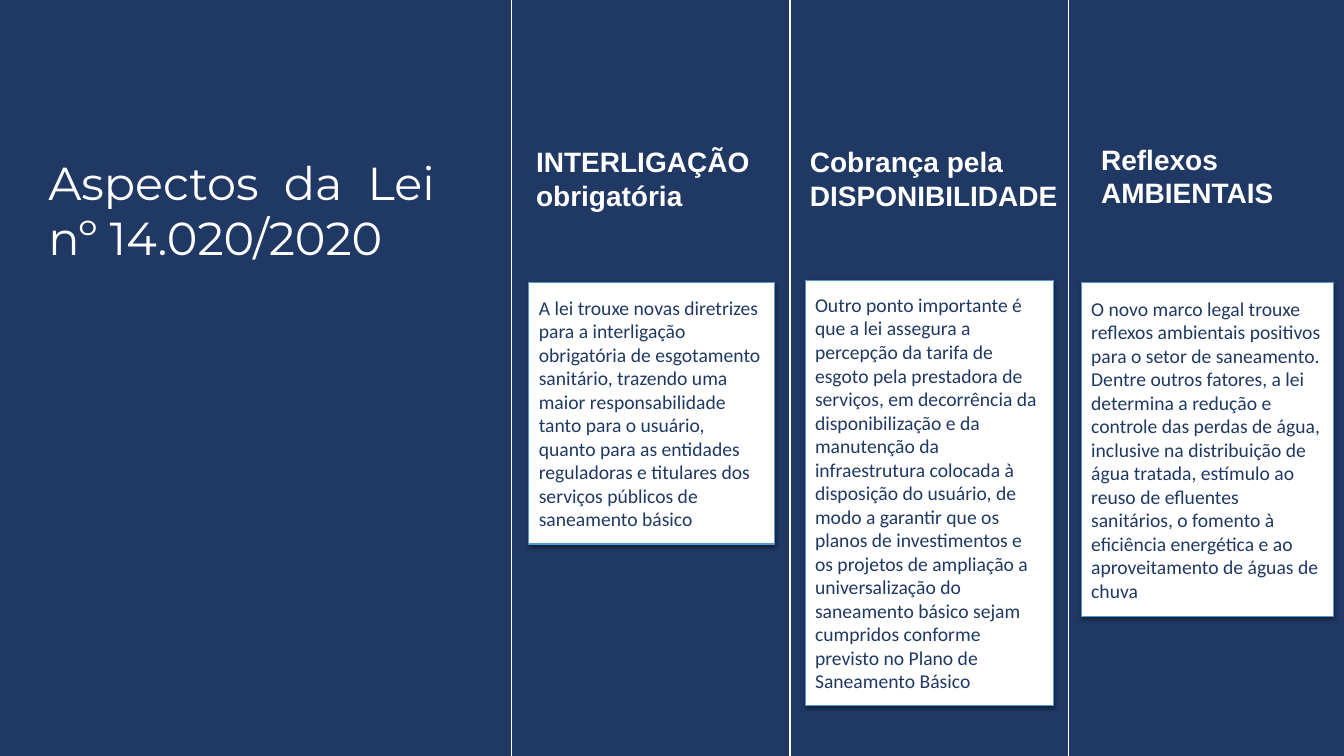
from dataclasses import dataclass
from itertools import count

from lxml import etree
from pptx import Presentation
from pptx.dml.color import RGBColor
from pptx.enum.shapes import MSO_SHAPE
from pptx.enum.text import MSO_ANCHOR, MSO_AUTO_SIZE, PP_ALIGN
from pptx.oxml.ns import qn
from pptx.util import Cm, Pt

RECTANGLE = MSO_SHAPE.RECTANGLE
TOP, MIDDLE = MSO_ANCHOR.TOP, MSO_ANCHOR.MIDDLE
LEFT, JUSTIFY = PP_ALIGN.LEFT, PP_ALIGN.JUSTIFY
NO_AUTOFIT = MSO_AUTO_SIZE.NONE
TITLE_ONLY = 5


@dataclass(frozen=True)
class Theme:
    navy: RGBColor = RGBColor(0x20, 0x38, 0x64)
    white: RGBColor = RGBColor(0xFF, 0xFF, 0xFF)
    card_border: RGBColor = RGBColor(0x56, 0x98, 0xD3)
    title_font: str = "Montserrat"
    heading_font: str = "Arial"
    body_font: str = "Calibri"
    title_size: int = 33
    heading_size: int = 20
    body_size: int = 14
    border: float = 0.75


@dataclass(frozen=True)
class Aspect:
    """Boxes are left, top, width, height in cm, measured from the column corner."""
    heading: str
    heading_box: tuple
    explanation: str
    card_box: tuple


THEME = Theme()
SLIDE_SIZE = (33.87, 19.05)
TITLE_BOX = (0.97, 3.63, 10.24, 4.06)
FIRST_COLUMN = (12.9, -0.51, 7.01, 20.52)
ASPECTS = [
    Aspect(
        "INTERLIGAÇÃO obrigatória", (0.36, 4.02, 6.2, 1.96),
        "A lei trouxe novas diretrizes para a interligação obrigatória de "
        "esgotamento sanitário, trazendo uma maior responsabilidade tanto para "
        "o usuário, quanto para as entidades reguladoras e titulares dos "
        "serviços públicos de saneamento básico",
        (0.43, 7.62, 6.2, 6.6)),
    Aspect(
        "Cobrança pela DISPONIBILIDADE", (0.25, 4.02, 6.8, 1.96),
        "Outro ponto importante é que a lei assegura a percepção da tarifa de "
        "esgoto pela prestadora de serviços, em decorrência da disponibilização "
        "e da manutenção da infraestrutura colocada à disposição do usuário, de "
        "modo a garantir que os planos de investimentos e os projetos de "
        "ampliação a universalização do saneamento básico sejam cumpridos "
        "conforme previsto no Plano de Saneamento Básico",
        (0.38, 7.57, 6.27, 10.72)),
    Aspect(
        "Reflexos AMBIENTAIS", (0.58, 3.96, 6.2, 1.96),
        "O novo marco legal trouxe reflexos ambientais positivos para o setor "
        "de saneamento. Dentre outros fatores, a lei determina a redução e "
        "controle das perdas de água, inclusive na distribuição de água "
        "tratada, estímulo ao reuso de efluentes sanitários, o fomento à "
        "eficiência energética e ao aproveitamento de águas de chuva",
        (0.33, 7.62, 6.35, 8.43)),
]


def lengths(box):
    return [Cm(value) for value in box]


def inside(column, box):
    """Turn a box measured from the column corner into a slide box."""
    return (column[0] + box[0], column[1] + box[1], *box[2:])


def write_text(shape, text, *, font, size, color, bold=False, align=LEFT,
               anchor=TOP, inset_y=0.13):
    frame = shape.text_frame
    frame.word_wrap = True
    frame.auto_size = NO_AUTOFIT
    frame.vertical_anchor = anchor
    frame.margin_left = frame.margin_right = Cm(0.25)
    frame.margin_top = frame.margin_bottom = Cm(inset_y)
    paragraph = frame.paragraphs[0]
    paragraph.alignment = align
    run = paragraph.add_run()
    run.text = text
    run.font.name = font
    run.font.size = Pt(size)
    run.font.bold = bold
    run.font.color.rgb = color


def add_rectangle(slide, box, line, fill=None):
    rectangle = slide.shapes.add_shape(RECTANGLE, *lengths(box))
    rectangle.shadow.inherit = False
    if fill is None:
        rectangle.fill.background()
    else:
        rectangle.fill.solid()
        rectangle.fill.fore_color.rgb = fill
    rectangle.line.color.rgb = line
    rectangle.line.width = Pt(THEME.border)
    return rectangle


def add_soft_shadow(shape):
    effects = shape.element.spPr.find(qn("a:effectLst"))
    shadow = etree.SubElement(
        effects, qn("a:outerShdw"), blurRad=str(Pt(3.1)), dist=str(Pt(1.6)),
        dir="5400000", algn="ctr", rotWithShape="0")
    black = etree.SubElement(shadow, qn("a:srgbClr"), val="000000")
    etree.SubElement(black, qn("a:alpha"), val="38000")


def add_title(slide, box, text):
    title = slide.shapes.title
    title.left, title.top, title.width, title.height = lengths(box)
    write_text(title, text, font=THEME.title_font, size=THEME.title_size,
               color=THEME.white, align=JUSTIFY, inset_y=0.25)


def add_aspect(slide, column, aspect):
    add_rectangle(slide, column, THEME.white)
    heading = slide.shapes.add_textbox(*lengths(inside(column, aspect.heading_box)))
    write_text(heading, aspect.heading, font=THEME.heading_font,
               size=THEME.heading_size, color=THEME.white, bold=True)
    card = add_rectangle(slide, inside(column, aspect.card_box),
                         THEME.card_border, THEME.white)
    add_soft_shadow(card)
    write_text(card, aspect.explanation, font=THEME.body_font,
               size=THEME.body_size, color=THEME.navy, anchor=MIDDLE)


def main():
    presentation = Presentation()
    presentation.slide_width, presentation.slide_height = lengths(SLIDE_SIZE)
    slide = presentation.slides.add_slide(presentation.slide_layouts[TITLE_ONLY])
    slide.background.fill.solid()
    slide.background.fill.fore_color.rgb = THEME.navy
    add_title(slide, TITLE_BOX, "Aspectos da Lei nº 14.020/2020")
    left, top, width, height = FIRST_COLUMN
    for column_left, aspect in zip(count(left, width), ASPECTS):
        add_aspect(slide, (column_left, top, width, height), aspect)
    presentation.save("out.pptx")


if __name__ == "__main__":
    main()
